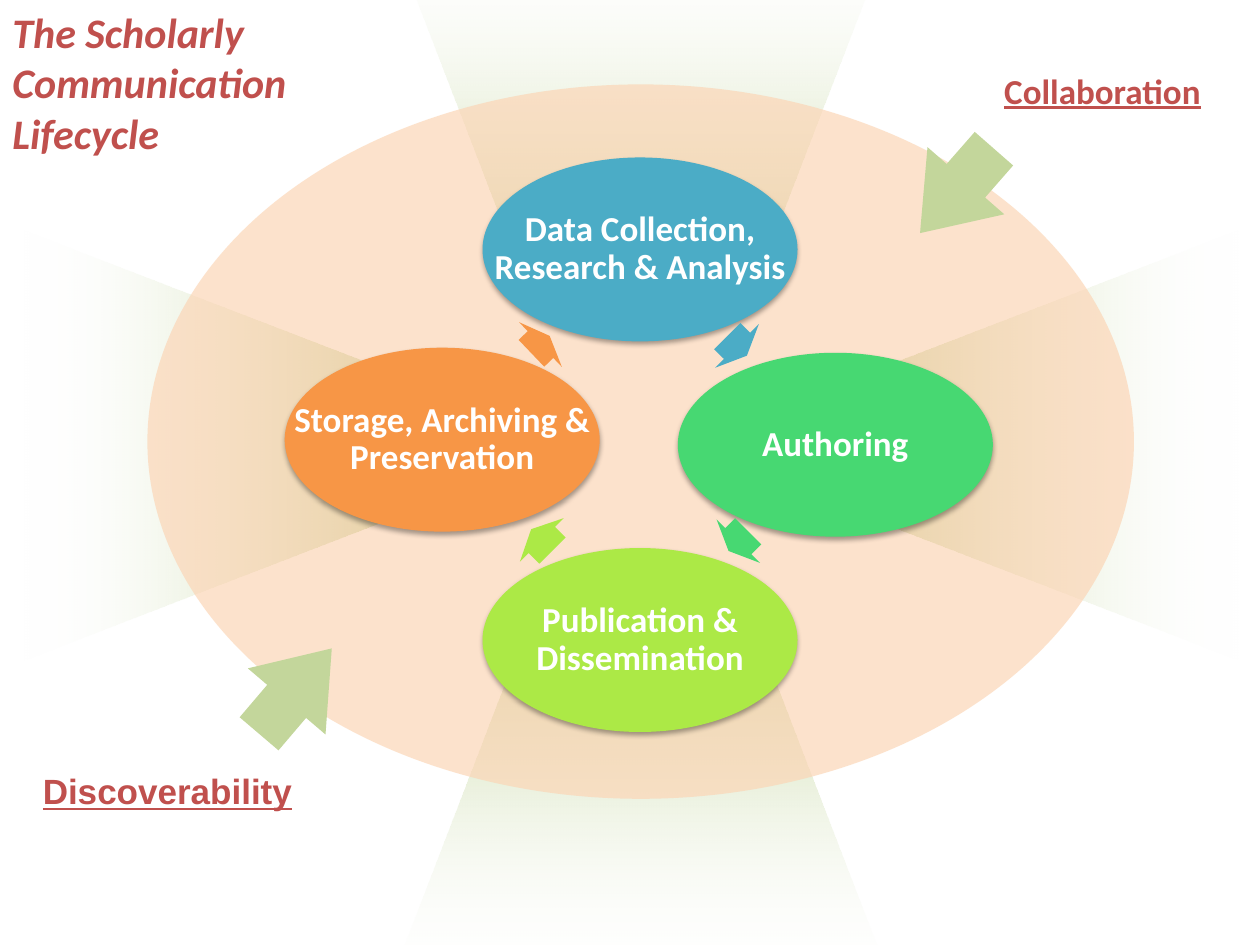
import pptx
import pptx.dml.color
import pptx.enum.shapes
import pptx.enum.text
import pptx.oxml
import pptx.oxml.ns
import pptx.util

KIND = pptx.enum.shapes.MSO_SHAPE
ALIGN = pptx.enum.text.PP_ALIGN
NS = pptx.oxml.ns.nsdecls("a")

# Grid of 100 columns and 75 rows
WIDE, HIGH = pptx.util.Inches(10), pptx.util.Inches(7.5)
COL, ROW = WIDE / 100, HIGH / 75

RED, SAGE, WHITE = "C0504D", "C3D69B", "FFFFFF"
OVAL = (25, 14.6)

FADE = f"""<a:gradFill {NS} rotWithShape="1"><a:gsLst>
<a:gs pos="0"><a:srgbClr val="{SAGE}"/></a:gs>
<a:gs pos="100000"><a:srgbClr val="{WHITE}"><a:alpha val="0"/></a:srgbClr></a:gs>
</a:gsLst><a:lin ang="5400000" scaled="0"/></a:gradFill>"""

SHADE = f"""<a:outerShdw {NS} blurRad="39400" dist="22900" dir="5400000"
rotWithShape="0"><a:srgbClr val="000000"><a:alpha val="35000"/></a:srgbClr>
</a:outerShdw>"""


def hue(code):
    return pptx.dml.color.RGBColor.from_string(code)


def place(box):
    left, top, wide, high = box
    return [round(n) for n in (left * COL, top * ROW, wide * COL, high * ROW)]


def draw(slide, kind, box, fill, turn=0, adj=()):
    """Add a flat shape without outline."""
    shape = slide.shapes.add_shape(kind, *place(box))
    shape.rotation = turn
    for i, share in enumerate(adj):
        shape.adjustments[i] = share
    shape.fill.solid()
    shape.fill.fore_color.rgb = hue(fill)
    shape.line.fill.background()
    shape.shadow.inherit = False
    return shape


def beam(slide, box, turn):
    """Add a trapezoid that fades out towards its wide end."""
    shape = draw(slide, KIND.TRAPEZOID, box, SAGE, turn, [0.385])
    props = shape.element.spPr
    solid = props.find(pptx.oxml.ns.qn("a:solidFill"))
    props.replace(solid, pptx.oxml.parse_xml(FADE))


def halo(slide, box, fill, share):
    """Add a see-through ellipse."""
    shape = draw(slide, KIND.OVAL, box, fill)
    tint = shape.element.spPr.find(".//" + pptx.oxml.ns.qn("a:srgbClr"))
    alpha = pptx.oxml.parse_xml(f'<a:alpha {NS} val="{share * 1000}"/>')
    tint.append(alpha)


def write(slide, box, words, size, color, font="Calibri", align=ALIGN.CENTER,
          under=None, slant=None):
    """Add a text box with one bold run."""
    frame = slide.shapes.add_textbox(*place(box)).text_frame
    frame.word_wrap = True
    para = frame.paragraphs[0]
    para.alignment = align
    run = para.add_run()
    run.text = words
    run.font.name, run.font.size = font, pptx.util.Pt(size)
    run.font.bold, run.font.italic, run.font.underline = True, slant, under
    run.font.color.rgb = hue(color)
    return frame


def stage(slide, left, top, fill, words):
    """Add one step of the cycle: a shaded oval and its label."""
    box = (left, top, *OVAL)
    shape = draw(slide, KIND.OVAL, box, fill)
    props = shape.element.spPr
    props.find(pptx.oxml.ns.qn("a:effectLst")).append(pptx.oxml.parse_xml(SHADE))
    frame = write(slide, box, words, 20, WHITE)
    frame.vertical_anchor = pptx.enum.text.MSO_ANCHOR.MIDDLE
    frame.margin_left = frame.margin_right = pptx.util.Inches(0.03)
    frame.margin_top = frame.margin_bottom = pptx.util.Inches(0.03)
    frame.paragraphs[0].line_spacing = 0.9


def main():
    deck = pptx.Presentation()
    deck.slide_width, deck.slide_height = WIDE, HIGH
    slide = deck.slides.add_slide(deck.slide_layouts[6])

    # Fading beams and the large ellipse
    for box, turn in [((30.8, 50, 40, 28.3), 0),
                      ((30.8, -5.8, 40, 28.3), 180),
                      ((-1.2, 21.2, 34.2, 28.3), 90),
                      ((67.1, 21.2, 34.2, 28.3), 270)]:
        beam(slide, box, turn)
    halo(slide, (11.7, 6.7, 78.3, 56.7), "FCD5B5", 68)

    # Cycle: each stage is followed by an arrow of its colour
    cycle = [
        (38.3, 12.5, "4BACC6", "Data Collection, Research & Analysis",
         (57.4, 25, 2.2, 4.9), 45),
        (53.8, 28, "47D872", "Authoring", (57.5, 40.5, 2.2, 4.9), 135),
        (38.3, 43.5, "ACE946", "Publication & Dissemination",
         (41.8, 40.4, 2.4, 4.9), 225.2),
        (22.6, 27.6, "F79646", "Storage, Archiving & Preservation",
         (41.9, 24.9, 2, 4.9), 316.3),
    ]
    for left, top, fill, words, box, turn in cycle:
        stage(slide, left, top, fill, words)
        draw(slide, KIND.RIGHT_ARROW, box, fill, turn, [0.6, 0.5])

    # Outer forces and their arrows
    write(slide, (72.5, 5, 30, 5.8), "Collaboration", 20, RED, under=True)
    write(slide, (-4.2, 60.6, 35, 4.4), "Discoverability", 20, RED, "Arial",
          under=True)
    for left, top, turn in [(19, 50.8, 310.4), (71.5, 11.1, 131.2)]:
        draw(slide, KIND.RIGHT_ARROW, (left, top, 8.9, 8.1), SAGE, turn,
             [0.5, 0.682])

    # Title
    write(slide, (0, 0, 30, 14.2), "The Scholarly Communication Lifecycle",
          24, RED, align=ALIGN.LEFT, slant=True)

    deck.save("out.pptx")


if __name__ == "__main__":
    main()
